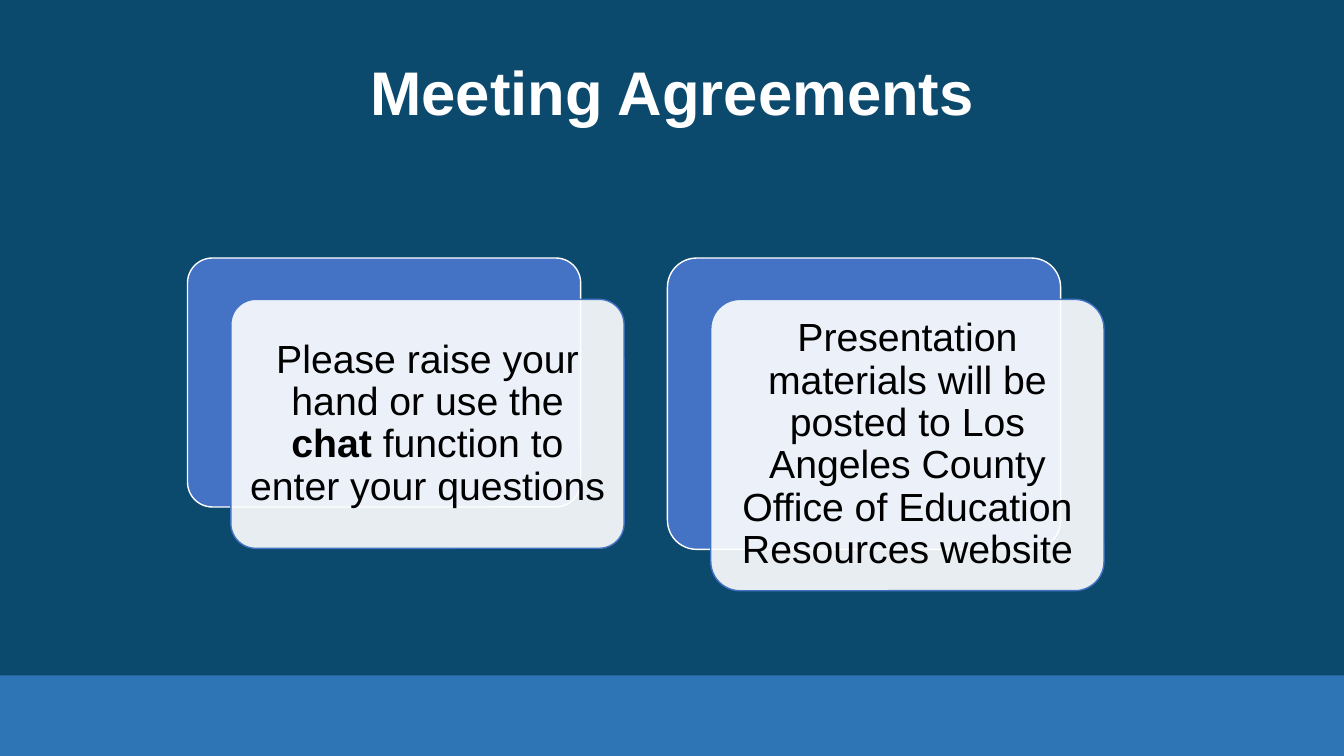
from lxml import etree
from pptx import Presentation
from pptx.dml.color import RGBColor
from pptx.enum.shapes import MSO_SHAPE
from pptx.enum.text import MSO_ANCHOR, PP_ALIGN
from pptx.oxml.ns import qn
from pptx.util import Inches, Pt

RECTANGLE, ROUNDED = MSO_SHAPE.RECTANGLE, MSO_SHAPE.ROUNDED_RECTANGLE
MIDDLE, CENTER = MSO_ANCHOR.MIDDLE, PP_ALIGN.CENTER
COLORS = {"background": "0C4A6D", "band": "2E75B6", "card": "4472C4",
          "white": "FFFFFF", "black": "000000"}


def color(name):
    return RGBColor.from_string(COLORS[name])


def write(frame, text, size, ink, bold=False, inset=0.1):
    """Fill a frame with one centred paragraph; asterisks switch bold."""
    frame.word_wrap = True
    frame.vertical_anchor = MIDDLE
    frame.margin_left = frame.margin_right = Inches(inset)
    frame.margin_top = frame.margin_bottom = Inches(inset)
    para = frame.paragraphs[0]
    para.alignment = CENTER
    para.line_spacing = 0.9
    para.space_before = Pt(0)
    for index, part in enumerate(text.split("*")):
        span = para.add_run()
        span.text = part
        span.font.name = "Arial"
        span.font.size = Pt(size)
        span.font.bold = bold or index % 2 == 1
        span.font.color.rgb = color(ink)


deck = Presentation()
deck.slide_width, deck.slide_height = Inches(13.33), Inches(7.5)
page = deck.slides.add_slide(deck.slide_layouts[5])
page.background.fill.solid()
page.background.fill.fore_color.rgb = color("background")

# Footer band
band = page.shapes.add_shape(RECTANGLE, 0, Inches(6.7), deck.slide_width, Inches(0.8))
band.shadow.inherit = False
band.fill.solid()
band.fill.fore_color.rgb = color("band")
band.line.fill.background()

# Title
title = page.shapes.title
title.left, title.top = Inches(0.17), Inches(0.22)
title.width, title.height = Inches(13), Inches(1.45)
write(title.text_frame, "Meeting Agreements", 44, "white", bold=True)

# Agreements: a blue card with a translucent text card offset in front
LEFT, TOP, CARD_WIDTH, COLUMN_STEP = 1.86, 2.56, 3.9, 4.76
OFFSET_X, OFFSET_Y = 0.43, 0.41
agreements = [
    ("Please raise your hand or use the *chat* function to enter your questions", 2.47),
    ("Presentation materials will be posted to Los Angeles County Office of "
     "Education Resources website", 2.89),
]
layers = [("card", "white"), ("white", "card")]
for column, (text, height) in enumerate(agreements):
    for depth, (fill, outline) in enumerate(layers):
        card = page.shapes.add_shape(
            ROUNDED,
            Inches(LEFT + column * COLUMN_STEP + depth * OFFSET_X),
            Inches(TOP + depth * OFFSET_Y), Inches(CARD_WIDTH), Inches(height))
        card.adjustments[0] = 0.1
        card.shadow.inherit = False
        card.fill.solid()
        card.fill.fore_color.rgb = color(fill)
        card.line.color.rgb = color(outline)
        card.line.width = Pt(1)
    # The front card is 90 % opaque and carries the text
    tint = card.fill._xPr.find(qn("a:solidFill"))[0]
    etree.SubElement(tint, qn("a:alpha"), val="90000")
    write(card.text_frame, text, 28, "black")

deck.save("out.pptx")
